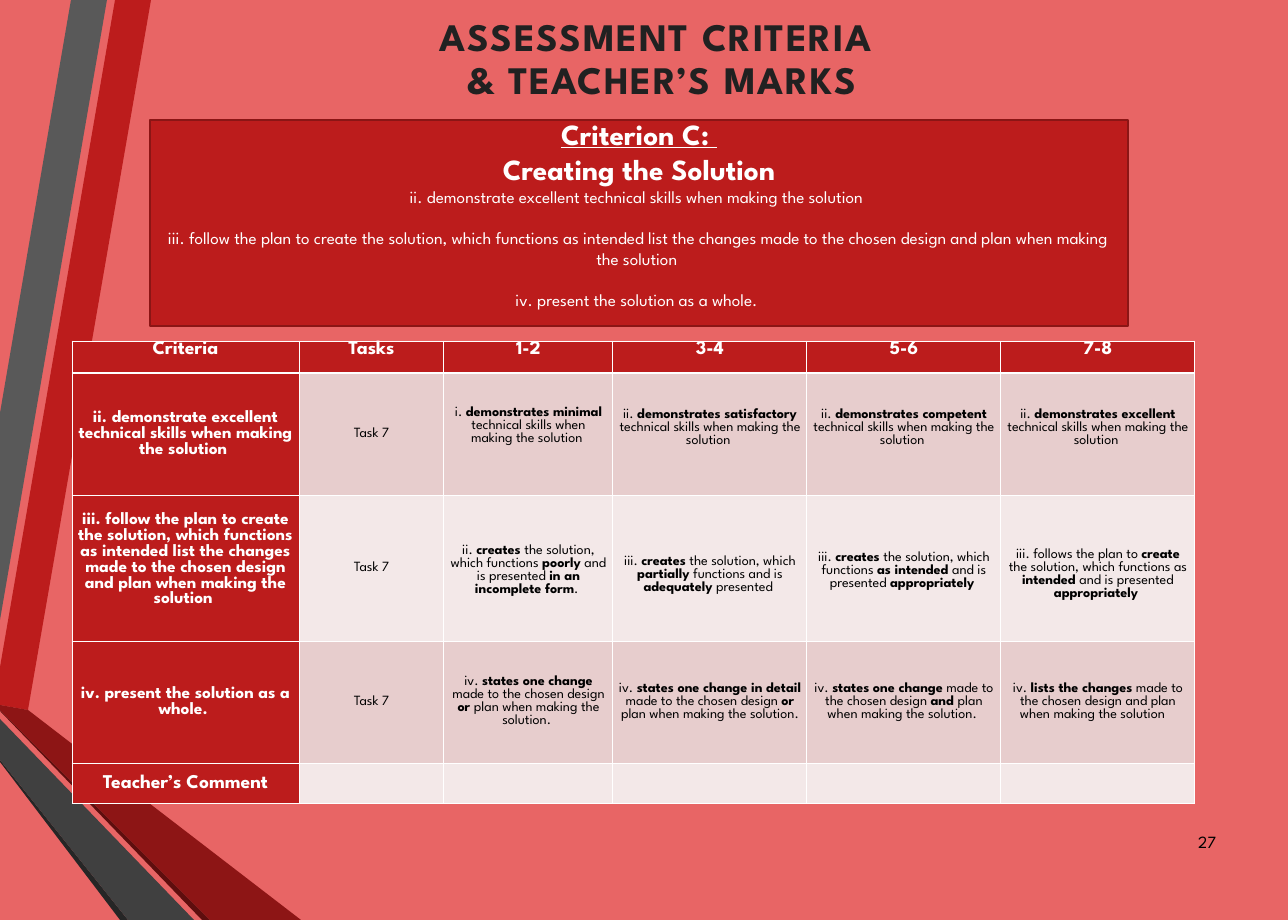
from dataclasses import dataclass

from lxml.etree import SubElement
from pptx import Presentation
from pptx.dml.color import RGBColor
from pptx.enum.shapes import MSO_SHAPE
from pptx.enum.text import MSO_ANCHOR as Anchor, MSO_AUTO_SIZE as AutoSize, PP_ALIGN as Align
from pptx.oxml.ns import qn
from pptx.util import Pt

PX = 11737
FONT = "League Spartan"
TIGHT = 0.92
COLORS = {
    "background": "E86565", "red": "BC1C1C", "outline": "8B1515", "crimson": "8D1515",
    "maroon": "5E0E0E", "gray": "595959", "charcoal": "404040", "soot": "262626",
    "title": "212121", "white": "FFFFFF", "black": "000000",
    "band": "E7CDCD", "light band": "F3E8E8",
}


@dataclass
class Ribbon:
    color: str
    corners: list[tuple[int, int]]


@dataclass
class Line:
    """One paragraph; text between ** marks is bold."""
    text: str
    size: float
    color: str = "white"
    bold: bool = False
    underline: bool = False
    leading: float = 0
    before: float = 0
    align: Align = Align.CENTER
    tracking: int = 0


@dataclass
class Level:
    text: str
    shift: int = 0


@dataclass
class Criterion:
    title: Level
    levels: list[Level]
    band: str


RIBBONS = [
    Ribbon("red", [(0, 667), (0, 705), (28, 710), (151, 0), (115, 0)]),
    Ribbon("gray", [(107, 0), (71, 0), (0, 413), (0, 620)]),
    Ribbon("soot", [(0, 760), (0, 762), (120, 920), (128, 920)]),
    Ribbon("maroon", [(0, 710), (0, 711), (202, 920), (210, 920)]),
    Ribbon("crimson", [(0, 710), (210, 920), (301, 920), (28, 710), (0, 705)]),
    Ribbon("charcoal", [(0, 760), (128, 920), (194, 920), (0, 719)]),
]
TITLE = [Line(text, 36, "title", bold=True, leading=39.7, tracking=150)
         for text in ("ASSESSMENT CRITERIA ", "& TEACHER’S MARKS")]
SKILLS = "ii. demonstrate excellent technical skills when making the solution "
PLAN = ("iii. follow the plan to create the solution, which functions as intended "
        "list the changes made to the chosen design and plan when making the solution ")
WHOLE = "iv. present the solution as a whole. "
BANNER = [
    Line("Criterion C: ", 27, bold=True, underline=True, leading=29),
    Line("Creating the Solution", 27, bold=True, leading=32.4),
    Line(SKILLS, 15.8, leading=19),
    Line(PLAN, 15.8, leading=19, before=19),
    Line(WHOLE, 15.8, leading=19, before=19),
]
COLUMNS = [227, 145, 169, 194, 194, 194]
ROWS = [32, 122, 146, 122, 41]
HEADINGS = ["Criteria", "Tasks", "1-2", "3-4", "5-6", "7-8"]
CRITERIA = [
    Criterion(Level(SKILLS), [
        Level(f"{number}. **demonstrates {grade} **technical skills when making the solution ", shift)
        for number, grade, shift in (("i", "minimal", -8), ("ii", "satisfactory", -6),
                                     ("ii", "competent", -6), ("ii", "excellent", -6))
    ], "band"),
    Criterion(Level(PLAN, -8), [
        Level("ii. **creates **the solution, which functions **poorly **and is presented "
              "**in an incomplete form**. ", 3),
        Level("iii. **creates **the solution, which **partially **functions and is "
              "**adequately **presented ", 7),
        Level("iii. **creates **the solution, which functions **as intended **and is presented "
              "**appropriately **", 3),
        Level("iii. follows the plan to **create **the solution, which functions as "
              "**intended **and is presented **appropriately **", 7),
    ], "light band"),
    Criterion(Level(WHOLE), [
        Level("iv. **states one change **made to the chosen design **or **plan when making the solution. "),
        Level("iv. **states one change in detail **made to the chosen design **or **"
              "plan when making the solution."),
        Level("iv. **states one change **made to the chosen design **and **plan when making the solution. "),
        Level("iv. **lists the changes **made to the chosen design and plan when making the solution \t"),
    ], "band"),
]


def apply(target, formats: dict) -> None:
    for name, value in formats.items():
        setattr(target, name, value)


def rgb(name: str) -> RGBColor:
    return RGBColor.from_string(COLORS[name])


def paint(part, color: str) -> None:
    part.fill.solid()
    part.fill.fore_color.rgb = rgb(color)


def place(shape, left: int, top: int, width: int, height: int) -> None:
    apply(shape, {"left": left * PX, "top": top * PX, "width": width * PX, "height": height * PX})


def write(frame, lines: list[Line]) -> None:
    for index, line in enumerate(lines):
        paragraph = frame.add_paragraph() if index else frame.paragraphs[0]
        apply(paragraph, {"alignment": line.align, "space_before": Pt(line.before), "space_after": Pt(0),
                          "line_spacing": Pt(line.leading or line.size * TIGHT)})
        for order, text in enumerate(line.text.split("**")):
            if not text:
                continue
            run = paragraph.add_run()
            run.text = text
            apply(run.font, {"name": FONT, "size": Pt(line.size), "underline": line.underline,
                             "bold": line.bold or order % 2 == 1})
            run.font.color.rgb = rgb(line.color)
            if line.tracking:
                run.font._element.set("spc", str(line.tracking))


def draw_ribbon(shapes, ribbon: Ribbon) -> None:
    builder = shapes.build_freeform(*ribbon.corners[0], scale=PX)
    builder.add_line_segments(ribbon.corners[1:], close=True)
    shape = builder.convert_to_shape()
    shape.shadow.inherit = False
    paint(shape, ribbon.color)
    shape.line.fill.background()


def fill_cell(cell, line: Line | None, color: str, shift: int = 0, anchor: Anchor = Anchor.MIDDLE,
              above: int = 1, below: int = 1) -> None:
    """Shift moves centred text down by that many px; above and below are border points."""
    apply(cell, {"margin_left": 6 * PX, "margin_right": 6 * PX, "vertical_anchor": anchor,
                 "margin_top": max(0, 2 * shift) * PX, "margin_bottom": max(0, -2 * shift) * PX})
    properties = cell._tc.get_or_add_tcPr()
    for side, points in {"lnL": 1, "lnR": 1, "lnT": above, "lnB": below}.items():
        border = SubElement(properties, qn(f"a:{side}"), w=str(Pt(points)))
        SubElement(SubElement(border, qn("a:solidFill")), qn("a:srgbClr"), val=COLORS["white"])
    paint(cell, color)
    if line:
        write(cell.text_frame, [line])


def draw_marks(shapes) -> None:
    table = shapes.add_table(len(ROWS), len(COLUMNS), 72 * PX, 341 * PX,
                             sum(COLUMNS) * PX, sum(ROWS) * PX).table
    for column, width in zip(table.columns, COLUMNS):
        column.width = width * PX
    for row, height in zip(table.rows, ROWS):
        row.height = height * PX
    for column, heading in enumerate(HEADINGS):
        fill_cell(table.cell(0, column), Line(heading, 18, bold=True), "red", anchor=Anchor.TOP, below=3)
    for row, criterion in enumerate(CRITERIA, start=1):
        above = 3 if row == 1 else 1
        title = criterion.title
        fill_cell(table.cell(row, 0), Line(title.text, 16, bold=True), "red", title.shift, above=above)
        for column, level in enumerate([Level("Task 7"), *criterion.levels], start=1):
            fill_cell(table.cell(row, column), Line(level.text, 13, "black"), criterion.band,
                      level.shift, above=above)
    comment = len(ROWS) - 1
    fill_cell(table.cell(comment, 0), Line("Teacher’s Comment", 18, bold=True), "red")
    for column in range(1, len(COLUMNS)):
        fill_cell(table.cell(comment, column), None, "light band")


def main() -> None:
    deck = Presentation()
    apply(deck, {"slide_width": 1288 * PX, "slide_height": 920 * PX})
    slide = deck.slides.add_slide(deck.slide_layouts[5])
    paint(slide.background, "background")
    shapes = slide.shapes
    for ribbon in RIBBONS:
        draw_ribbon(shapes, ribbon)

    page_number = shapes.add_textbox(1165 * PX, 820 * PX, 59 * PX, 49 * PX).text_frame
    apply(page_number, {"word_wrap": True, "vertical_anchor": Anchor.MIDDLE})
    write(page_number, [Line("27", 15.8, "black", align=Align.RIGHT)])

    title = shapes.title
    place(title, 150, 11, 1024, 146)
    apply(title.text_frame, {"auto_size": AutoSize.NONE, "vertical_anchor": Anchor.TOP, "word_wrap": True,
                             "margin_left": 12 * PX, "margin_right": 12 * PX, "margin_top": 5 * PX})
    write(title.text_frame, TITLE)

    draw_marks(shapes)

    banner = shapes.add_shape(MSO_SHAPE.RECTANGLE, 150 * PX, 120 * PX, 978 * PX, 206 * PX)
    banner.shadow.inherit = False
    paint(banner, "red")
    banner.line.color.rgb = rgb("outline")
    banner.line.width = Pt(1.25)
    apply(banner.text_frame, {"word_wrap": True, "vertical_anchor": Anchor.TOP,
                              "margin_top": 0, "margin_bottom": 0})
    write(banner.text_frame, BANNER)
    deck.save("out.pptx")


if __name__ == "__main__":
    main()
